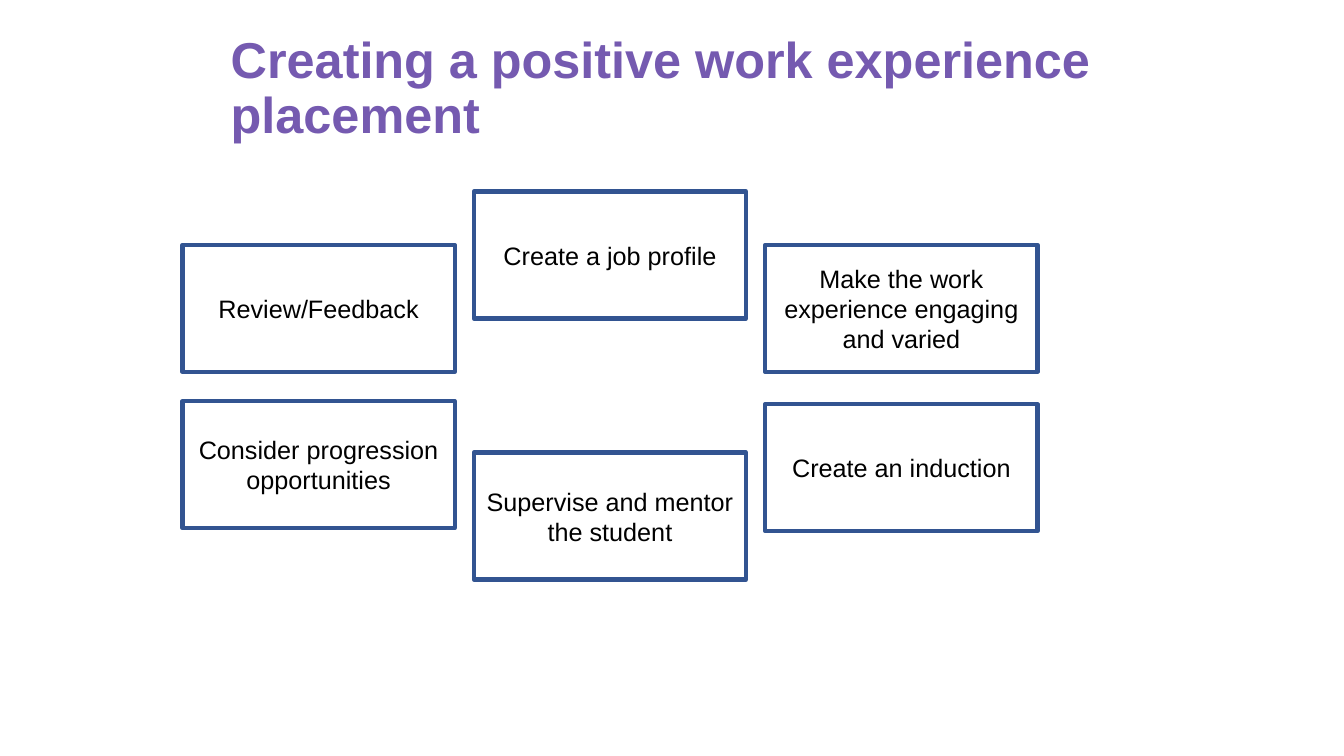
from pptx import Presentation
from pptx.dml.color import RGBColor
from pptx.enum.shapes import MSO_SHAPE
from pptx.enum.text import MSO_ANCHOR, PP_ALIGN
from pptx.util import Inches, Pt

STEPS = [
    ("Create a job profile", 1, 0),
    ("Make the work experience engaging and varied", 2, 0.53),
    ("Create an induction", 2, 2.11),
    ("Supervise and mentor the student", 1, 2.59),
    ("Consider progression opportunities", 0, 2.08),
    ("Review/Feedback", 0, 0.53),
]


def color(code):
    return RGBColor.from_string(code)


def write(shape, text, size, code, bold=False):
    frame = shape.text_frame
    frame.word_wrap = True
    frame.vertical_anchor = MSO_ANCHOR.MIDDLE
    frame.text = text
    para = frame.paragraphs[0]
    font = para.runs[0].font
    font.name = "Arial"
    font.size = Pt(size)
    font.bold = bold
    font.color.rgb = color(code)
    return para


def add_title(slide, left, top, width, height):
    box = slide.shapes.add_textbox(
        Inches(left), Inches(top), Inches(width), Inches(height))
    para = write(box, "Creating a positive work experience placement",
                 36, "755AB0", True)
    para.line_spacing = 0.9


def add_step(slide, text, left, top, width, height):
    box = slide.shapes.add_shape(
        MSO_SHAPE.RECTANGLE,
        Inches(left), Inches(top), Inches(width), Inches(height))
    box.shadow.inherit = False
    box.fill.background()
    box.line.color.rgb = color("325491")
    box.line.width = Pt(3)
    write(box, text, 18, "000000").alignment = PP_ALIGN.CENTER


def add_cycle(slide, left, top, width):
    wide, high = 2.7, 1.26
    pitch = (width - wide) / 2
    for text, column, drop in STEPS:
        add_step(slide, text, left + column * pitch, top + drop, wide, high)


def main():
    deck = Presentation()
    deck.slide_width = Inches(13.33)
    deck.slide_height = Inches(7.5)
    slide = deck.slides.add_slide(deck.slide_layouts[6])
    add_title(slide, 2.19, 0.31, 10.1, 1.16)
    add_cycle(slide, 1.81, 1.9, 8.48)
    deck.save("out.pptx")


if __name__ == "__main__":
    main()
